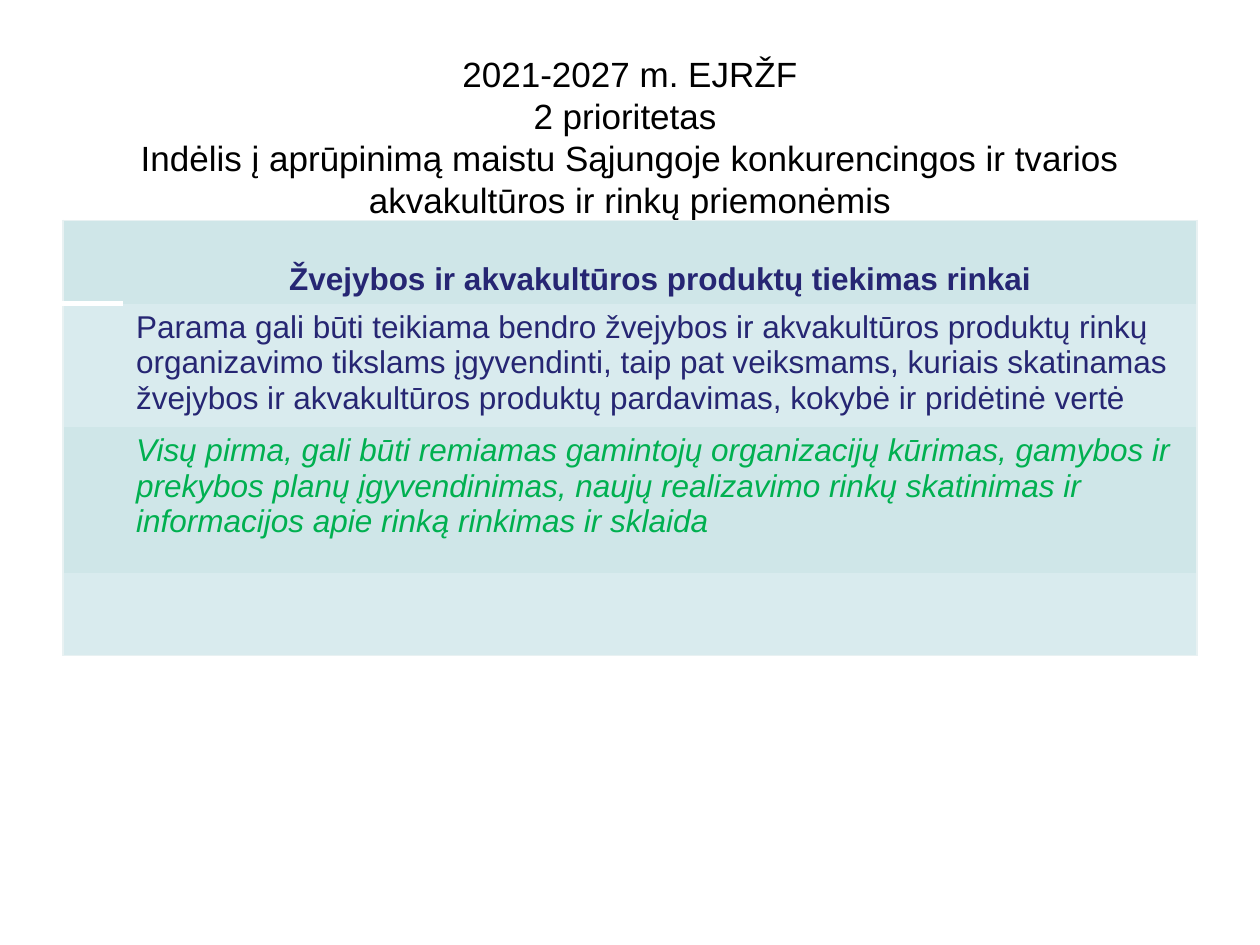
from pptx import Presentation
from pptx.dml.color import RGBColor
from pptx.enum.text import MSO_ANCHOR, MSO_AUTO_SIZE, PP_ALIGN
from pptx.oxml import parse_xml
from pptx.oxml.ns import nsdecls
from pptx.util import Inches, Pt

TITLE_LINES = [
    "2021-2027 m. EJRŽF",
    "2 prioritetas ",
    "Indėlis į aprūpinimą maistu Sąjungoje konkurencingos ir tvarios "
    "akvakultūros ir rinkų priemonėmis",
]
HEADING = "Žvejybos ir akvakultūros produktų tiekimas rinkai"
SUPPORT = (
    "Parama gali būti teikiama bendro žvejybos ir akvakultūros produktų rinkų "
    "organizavimo tikslams įgyvendinti, taip pat veiksmams, kuriais skatinamas "
    "žvejybos ir akvakultūros produktų pardavimas, kokybė ir pridėtinė vertė"
)
EXAMPLES = (
    "Visų pirma, gali būti remiamas gamintojų organizacijų kūrimas, gamybos ir "
    "prekybos planų įgyvendinimas, naujų realizavimo rinkų skatinimas ir "
    "informacijos apie rinką rinkimas ir sklaida"
)


def color(hex_code):
    return RGBColor.from_string(hex_code)


class SlideBuilder:
    font = "Arial"
    black, navy, green = "000000", "262673", "00B050"
    bands = "CFE6E8", "D9EBEE"
    edge, white = "E8F1F2", "FFFFFF"

    def __init__(self, slide):
        self.slide = slide

    def add_run(self, paragraph, text, size, ink, bold=False, italic=False):
        run = paragraph.add_run()
        run.text = text
        font = run.font
        font.name, font.size = self.font, Pt(size)
        font.bold, font.italic = bold, italic
        font.color.rgb = color(ink)

    def title(self, lines, left, top, width, height):
        title = self.slide.shapes.title
        title.left, title.top = Inches(left), Inches(top)
        title.width, title.height = Inches(width), Inches(height)
        frame = title.text_frame
        frame.word_wrap = True
        frame.auto_size = MSO_AUTO_SIZE.NONE
        frame.vertical_anchor = MSO_ANCHOR.MIDDLE
        paragraph = frame.paragraphs[0]
        paragraph.alignment = PP_ALIGN.CENTER
        paragraph.line_spacing = Pt(24)
        for index, line in enumerate(lines):
            if index:
                paragraph.add_line_break()
            self.add_run(paragraph, line, 20, self.black)

    def table(self, left, top, columns, rows):
        """Add a banded, outlined table; columns are widths, rows are heights."""
        table = self.slide.shapes.add_table(
            len(rows), len(columns), Inches(left), Inches(top),
            Inches(sum(columns)), Inches(sum(rows))).table
        table.first_row = table.horz_banding = False
        for column, width in zip(table.columns, columns):
            column.width = Inches(width)
        for row, height in zip(table.rows, rows):
            row.height = Inches(height)
        last_row, last_column = len(rows) - 1, len(columns) - 1
        for r in range(len(rows)):
            for c in range(len(columns)):
                cell = table.cell(r, c)
                cell.fill.solid()
                cell.fill.fore_color.rgb = color(self.bands[r % 2])
                outer = {"L": c == 0, "R": c == last_column,
                         "T": r == 0, "B": r == last_row}
                lines = {side: (self.edge, 0.75) if on else None
                         for side, on in outer.items()}
                if (r, c) == (0, 0):
                    lines["B"] = self.white, 3
                elif (r, c) == (1, 0):
                    lines["T"] = self.white, 3
                self.borders(cell, lines)
        return table

    def borders(self, cell, lines):
        properties = cell._tc.get_or_add_tcPr()
        for index, (side, line) in enumerate(lines.items()):
            if line:
                ink, width = line
                size = Pt(width)
                paint = f'<a:solidFill><a:srgbClr val="{ink}"/></a:solidFill>'
            else:
                size, paint = 0, "<a:noFill/>"
            properties.insert(index, parse_xml(
                f'<a:ln{side} {nsdecls("a")} w="{size}">{paint}</a:ln{side}>'))

    def cell_text(self, cell, text, ink, align=PP_ALIGN.LEFT,
                  anchor=MSO_ANCHOR.TOP, **style):
        cell.vertical_anchor = anchor
        paragraph = cell.text_frame.paragraphs[0]
        paragraph.alignment = align
        self.add_run(paragraph, text, 18, ink, **style)


def main():
    deck = Presentation()
    deck.slide_width, deck.slide_height = Inches(10), Inches(7.5)
    page = SlideBuilder(deck.slides.add_slide(deck.slide_layouts[5]))

    page.title(TITLE_LINES, 0.5, 0.3, 9, 1.56)
    measures = page.table(0.5, 1.75, [0.48, 8.52], [0.66, 0.98, 1.16, 0.65])
    page.cell_text(measures.cell(0, 1), HEADING, page.navy, bold=True,
                   align=PP_ALIGN.CENTER, anchor=MSO_ANCHOR.BOTTOM)
    page.cell_text(measures.cell(1, 1), SUPPORT, page.navy)
    page.cell_text(measures.cell(2, 1), EXAMPLES, page.green, italic=True)

    deck.save("out.pptx")


if __name__ == "__main__":
    main()
